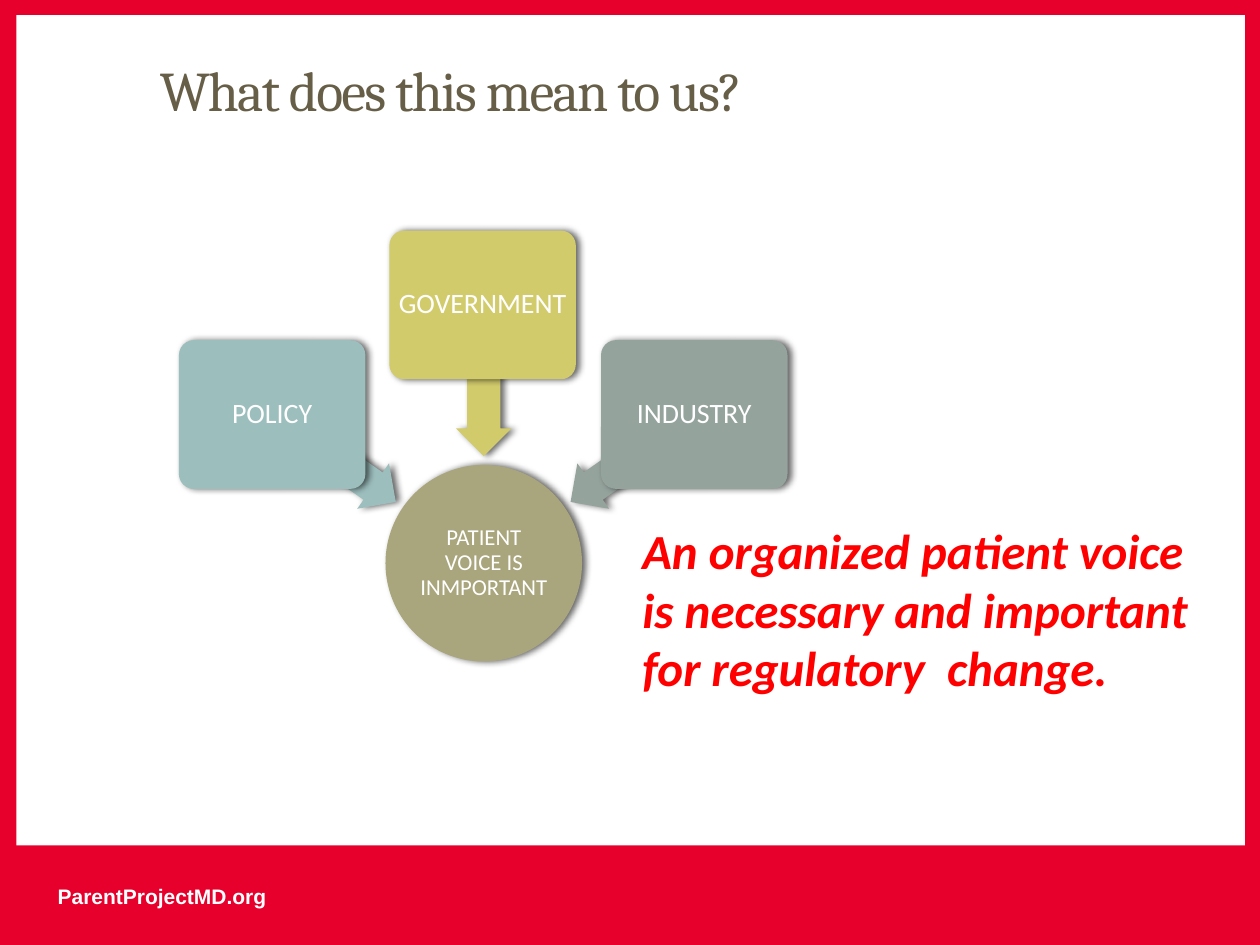
from dataclasses import dataclass

import pptx
import pptx.dml.color
import pptx.enum.shapes
import pptx.enum.text
import pptx.oxml
import pptx.oxml.ns
import pptx.util
from pptx.util import Inches

SHAPE = pptx.enum.shapes.MSO_SHAPE
ALIGN = pptx.enum.text.PP_ALIGN
ANCHOR = pptx.enum.text.MSO_ANCHOR


@dataclass(frozen=True)
class Theme:
    red: str = "E7002C"
    white: str = "FFFFFF"
    brown: str = "675E47"
    olive: str = "A9A57C"
    teal: str = "9CBEBD"
    yellow: str = "D2CB6C"
    gray: str = "95A39D"
    accent: str = "FF0000"
    title_size: int = 32
    message_size: int = 28
    box_size: int = 16
    circle_size: int = 13
    footer_size: int = 12


theme = Theme()


def add_block(kind, left, top, width, height, color, shadow=True):
    """Add a filled preset shape without outline, optionally with a soft shadow."""
    shape = slide.shapes.add_shape(
        kind, Inches(left), Inches(top), Inches(width), Inches(height))
    shape.fill.solid()
    shape.fill.fore_color.rgb = pptx.dml.color.RGBColor.from_string(color)
    shape.line.fill.background()
    shape.shadow.inherit = False
    if shadow:
        effects = shape.element.spPr.find(pptx.oxml.ns.qn("a:effectLst"))
        effects.append(pptx.oxml.parse_xml(
            f'<a:outerShdw {pptx.oxml.ns.nsdecls("a")} blurRad="{pptx.util.Pt(4)}" '
            f'dist="{pptx.util.Pt(2)}" dir="0" rotWithShape="0">'
            '<a:srgbClr val="000000"><a:alpha val="60000"/></a:srgbClr></a:outerShdw>'))
    return shape


def write(shape, text, size, font_name, color, margin=None, bold=False, italic=False):
    """Set one formatted paragraph; a margin marks a centred diagram label."""
    frame = shape.text_frame
    frame.word_wrap = True
    frame.text = text
    paragraph = frame.paragraphs[0]
    if margin is not None:
        frame.margin_left = frame.margin_right = Inches(margin)
        frame.margin_top = frame.margin_bottom = Inches(margin)
        frame.vertical_anchor = ANCHOR.MIDDLE
        paragraph.alignment = ALIGN.CENTER
        paragraph.line_spacing = 0.9
    run = paragraph.runs[0]
    run.font.size = pptx.util.Pt(size)
    run.font.name = font_name
    run.font.bold = bold
    run.font.italic = italic
    run.font.color.rgb = pptx.dml.color.RGBColor.from_string(color)
    return run


presentation = pptx.Presentation()
presentation.slide_width = Inches(10)
presentation.slide_height = Inches(7.5)
slide = presentation.slides.add_slide(presentation.slide_layouts[6])

# Red frame with white panel
add_block(SHAPE.RECTANGLE, 0, 0, 10, 7.5, theme.red, shadow=False)
add_block(SHAPE.RECTANGLE, 0.13, 0.12, 9.75, 6.59, theme.white, shadow=False)

# Footer
footer = slide.shapes.add_textbox(Inches(0.36), Inches(6.96), Inches(4.4), Inches(0.3))
write(footer, "ParentProjectMD.org", theme.footer_size, "Arial", theme.white, bold=True)

# Title
title = slide.shapes.add_textbox(Inches(1.17), Inches(0.08), Inches(8.26), Inches(1.25))
title.text_frame.vertical_anchor = ANCHOR.MIDDLE
title_run = write(title, "What does this mean to us?", theme.title_size, "Cambria", theme.brown)
title_run.font._element.set("spc", "-100")

# Central circle
circle = add_block(SHAPE.OVAL, 3.06, 3.69, 1.56, 1.56, theme.olive)
write(circle, "PATIENT VOICE IS INMPORTANT", theme.circle_size, "Calibri", theme.white, margin=0.01)

# Boxes with arrows into the circle: label, color, box left/top, arrow left/top, rotation
sources = [
    ("POLICY", theme.teal, 1.42, 2.7, 2.05, 3.42, 215),
    ("GOVERNMENT", theme.yellow, 3.09, 1.83, 3.24, 2.8, 270),
    ("INDUSTRY", theme.gray, 4.77, 2.7, 4.42, 3.42, 325),
]
for label, color, box_left, box_top, arrow_left, arrow_top, rotation in sources:
    arrow = add_block(SHAPE.LEFT_ARROW, arrow_left, arrow_top, 1.2, 0.44, color)
    arrow.adjustments[0] = 0.6
    arrow.adjustments[1] = 0.5
    arrow.rotation = rotation
    box = add_block(SHAPE.ROUNDED_RECTANGLE, box_left, box_top, 1.48, 1.18, color)
    box.adjustments[0] = 0.1
    write(box, label, theme.box_size, "Calibri", theme.white, margin=0.03)

# Key message
message = slide.shapes.add_textbox(Inches(5), Inches(4.08), Inches(4.7), Inches(1.51))
write(message, "An organized patient voice is necessary and important for regulatory  change.",
      theme.message_size, "Calibri", theme.accent, bold=True, italic=True)

presentation.save("out.pptx")
